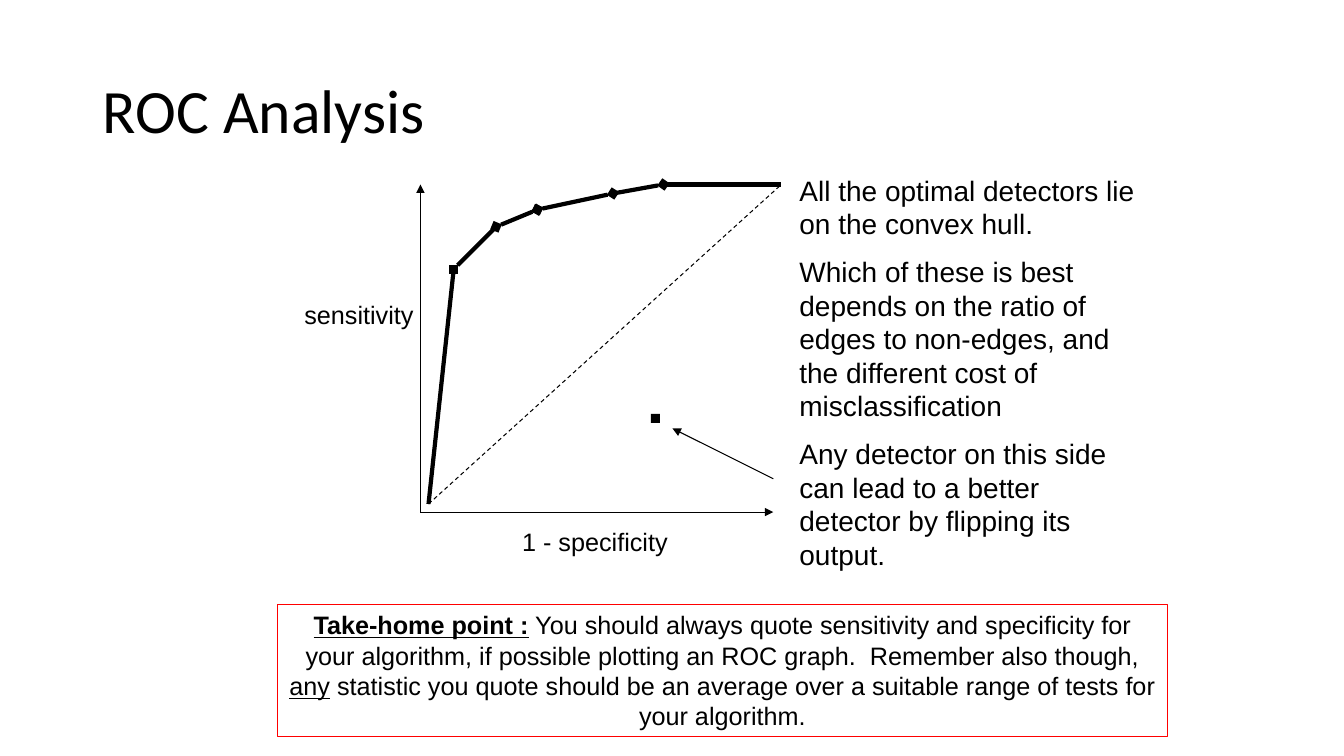
from itertools import pairwise

from lxml.etree import SubElement
from pptx import Presentation
from pptx.dml.color import RGBColor
from pptx.enum.dml import MSO_LINE_DASH_STYLE as Dash
from pptx.enum.shapes import MSO_CONNECTOR as Connector, MSO_SHAPE as Preset
from pptx.enum.text import MSO_ANCHOR as Anchor, PP_ALIGN as Align
from pptx.oxml.ns import qn
from pptx.util import Inches, Pt

BLACK = "000000"
RED = "FF0000"
MARKER = 0.09
HULL = [(0.08, 3.17), (0.33, 0.84), (0.75, 0.42), (1.16, 0.25),
        (1.91, 0.09), (2.41, 0), (3.58, 0)]
HULL_ENDS = [(None, None), ("diamond", None), ("diamond", "diamond"),
             ("diamond", "diamond"), (None, "diamond"), (None, None)]
REMARKS = [
    "All the optimal detectors lie on the convex hull.",
    "Which of these is best depends on the ratio of edges to non-edges, and  the different cost of misclassification",
    "Any detector on this side can lead to a better detector by flipping its output.",
]
TAKE_HOME = [
    ("Take-home point :", True, True),
    (" You should always quote sensitivity and specificity for your algorithm, if possible plotting an ROC graph.  Remember also though, ", False, False),
    ("any", False, True),
    (" statistic you quote should be an average over a suitable range of tests for your algorithm.", False, False),
]


def color(value):
    return RGBColor.from_string(value)


def add_span(para, text, size, font="Arial", bold=False, underline=False):
    span = para.add_run()
    span.text = text
    span.font.name = font
    span.font.size = Pt(size)
    span.font.bold = bold
    span.font.underline = underline
    span.font.color.rgb = color(BLACK)


def add_text(page, box, texts, size):
    frame = page.shapes.add_textbox(*map(Inches, box)).text_frame
    frame.word_wrap = True
    for index, text in enumerate(texts):
        para = frame.add_paragraph() if index else frame.paragraphs[0]
        if index:
            para.space_before = Pt(size / 2)
        add_span(para, text, size)


def add_line(page, start, end, width=0.75, head=None, tail=None, dash=None):
    line = page.shapes.add_connector(Connector.STRAIGHT, *map(Inches, (*start, *end)))
    line.line.color.rgb = color(BLACK)
    line.line.width = Pt(width)
    if dash:
        line.line.dash_style = dash
    outline = line.line._get_or_add_ln()
    for tag, kind in (("a:headEnd", head), ("a:tailEnd", tail)):
        if kind:
            SubElement(outline, qn(tag)).set("type", kind)
    SubElement(line._element.spPr, qn("a:effectLst"))


def add_marker(page, center):
    x, y = center
    box = (x - MARKER / 2, y - MARKER / 2, MARKER, MARKER)
    marker = page.shapes.add_shape(Preset.RECTANGLE, *map(Inches, box))
    marker.shadow.inherit = False
    marker.fill.solid()
    marker.fill.fore_color.rgb = color(BLACK)
    marker.line.fill.background()


def add_title(page, box, text):
    title = page.shapes.title
    title.left, title.top, title.width, title.height = map(Inches, box)
    frame = title.text_frame
    frame.vertical_anchor = Anchor.MIDDLE
    para = frame.paragraphs[0]
    para.alignment = Align.LEFT
    para.line_spacing = 0.9
    add_span(para, text, 44, "Calibri")


def add_roc_plot(page, box):
    left, top, width, height = box

    def at(x, y):
        return left + x, top + y

    origin = at(0, height)
    add_line(page, origin, at(0, 0), tail="triangle")
    add_line(page, origin, at(width, height), tail="triangle")
    add_text(page, (*at(0.91, height + 0.09), 1.92, 0.4), ["1 - specificity"], 18)
    add_text(page, (*at(-1.25, 1.09), 1.58, 0.4), ["sensitivity"], 18)
    for (start, end), (head, tail) in zip(pairwise(HULL), HULL_ENDS):
        add_line(page, at(*start), at(*end), 3, head, tail)
    add_line(page, at(*HULL[0]), at(*HULL[-1]), dash=Dash.DASH)
    add_marker(page, at(2.33, 2.32))
    add_line(page, at(width, 2.92), at(2.5, 2.42), tail="triangle")


def add_take_home(page, box):
    panel = page.shapes.add_shape(Preset.RECTANGLE, *map(Inches, box))
    panel.shadow.inherit = False
    panel.fill.background()
    panel.line.color.rgb = color(RED)
    panel.line.width = Pt(0.75)
    frame = panel.text_frame
    frame.word_wrap = True
    frame.vertical_anchor = Anchor.TOP
    para = frame.paragraphs[0]
    para.alignment = Align.CENTER
    for text, bold, underline in TAKE_HOME:
        add_span(para, text, 18, bold=bold, underline=underline)


def main():
    deck = Presentation()
    deck.slide_width, deck.slide_height = Inches(13.33), Inches(7.5)
    page = deck.slides.add_slide(deck.slide_layouts[5])
    add_title(page, (0.92, 0.4, 11.5, 1.45), "ROC Analysis")
    add_roc_plot(page, (4.17, 1.83, 3.5, 3.25))
    add_text(page, (7.83, 1.67, 3.58, 4.1), REMARKS, 20)
    add_take_home(page, (2.75, 6, 8.83, 1.31))
    deck.save("out.pptx")


if __name__ == "__main__":
    main()
